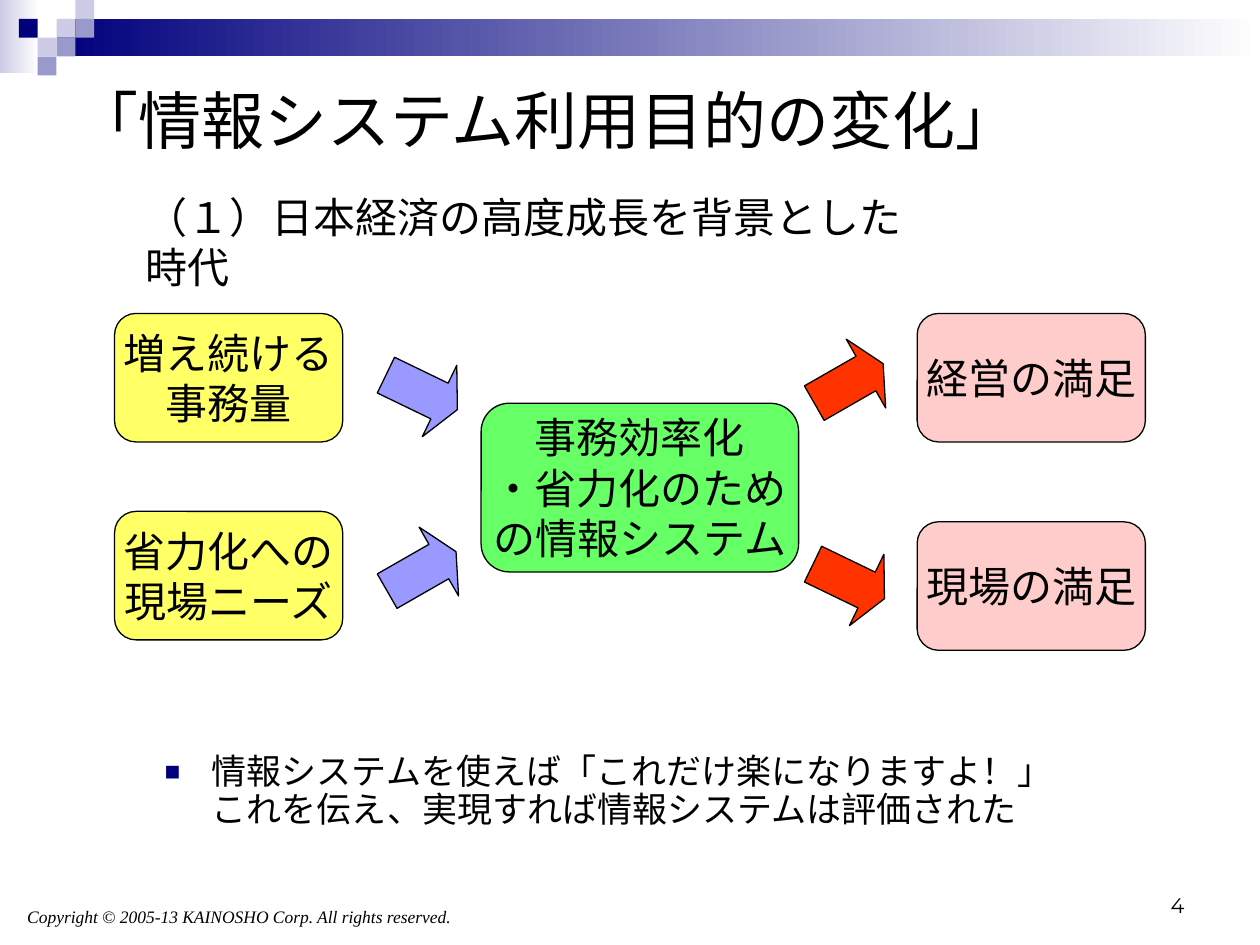
from dataclasses import dataclass

from lxml import etree
from pptx import Presentation
from pptx.dml.color import RGBColor
from pptx.enum import shapes, text
from pptx.oxml import ns
from pptx.util import Cm, Pt

BLACK = "000000"
NAVY = "00007D"
PALE = "CCCCE6"
LILAC = "9999CC"
PIXEL = 0.38
ARROW_SIZE = 1.6
INDENT = 0.95
SHAPE = shapes.MSO_SHAPE
ANCHOR = text.MSO_ANCHOR
ALIGN = text.PP_ALIGN


@dataclass
class Area:
    left: float
    top: float
    width: float
    height: float

    def lengths(self) -> tuple:
        return Cm(self.left), Cm(self.top), Cm(self.width), Cm(self.height)


@dataclass
class Box:
    area: Area
    fill: str
    lines: list


@dataclass
class Arrow:
    left: float
    top: float
    rotation: float
    fill: str


@dataclass
class Pixel:
    column: int
    row: int
    fill: str


SMALL = (4.6, 2.59)
BOXES = [
    Box(Area(9.7, 8.13, 6.4, 3.4), "66FF66",
        ["事務効率化", "・省力化のため", "の情報システム"]),
    Box(Area(18.49, 6.32, *SMALL), "FFCCCC", ["経営の満足"]),
    Box(Area(18.49, 10.52, *SMALL), "FFCCCC", ["現場の満足"]),
    Box(Area(2.31, 6.32, *SMALL), "FFFF66", ["増え続ける", "事務量"]),
    Box(Area(2.31, 10.31, *SMALL), "FFFF66", ["省力化への", "現場ニーズ"]),
]
DOWN, UP = 25.8, 330.2
ARROWS = [
    Arrow(7.7, 7.11, DOWN, "9999FF"),
    Arrow(7.7, 10.72, UP, "9999FF"),
    Arrow(16.31, 6.93, UP, "FF3300"),
    Arrow(16.31, 10.92, DOWN, "FF3300"),
]
PIXELS = [
    Pixel(3, 1, PALE), Pixel(4, 0, PALE), Pixel(4, 1, LILAC),
    Pixel(2, 2, PALE), Pixel(1, 1, NAVY), Pixel(3, 2, LILAC),
    Pixel(2, 3, LILAC),
]


def color(value: str) -> RGBColor:
    return RGBColor.from_string(value)


def apply(target, values: dict) -> None:
    for name, value in values.items():
        setattr(target, name, value)


def write(shape, lines: list, size: float, frame_format: dict,
          font_format: dict = {}, alignment=ALIGN.LEFT) -> None:
    frame = shape.text_frame
    frame.text = "\n".join(lines)
    apply(frame, {"auto_size": text.MSO_AUTO_SIZE.NONE, **frame_format})
    for paragraph in frame.paragraphs:
        paragraph.alignment = alignment
        for run in paragraph.runs:
            apply(run.font, {"name": "Arial", "size": Pt(size), **font_format})
            run.font.color.rgb = color(BLACK)


def add_textbox(slide, area: Area, *content, **options):
    textbox = slide.shapes.add_textbox(*area.lengths())
    write(textbox, *content, **options)
    return textbox


def add_filled(slide, kind, area: Area, fill: str, outlined: bool = False):
    shape = slide.shapes.add_shape(kind, *area.lengths())
    shape.shadow.inherit = False
    shape.fill.solid()
    shape.fill.fore_color.rgb = color(fill)
    if outlined:
        shape.line.color.rgb = color(BLACK)
        shape.line.width = Pt(0.75)
    else:
        shape.line.fill.background()
    return shape


def add_fade(slide, area: Area, start: str, end: str) -> None:
    shape = add_filled(slide, SHAPE.RECTANGLE, area, start)
    shape.fill.gradient()
    shape.fill.gradient_angle = 0
    for stop, value in zip(shape.fill.gradient_stops, (start, end)):
        stop.color.rgb = color(value)


def add_box(slide, box: Box) -> None:
    shape = add_filled(slide, SHAPE.ROUNDED_RECTANGLE, box.area, box.fill, True)
    write(shape, box.lines, 24,
          {"word_wrap": False, "vertical_anchor": ANCHOR.MIDDLE},
          alignment=ALIGN.CENTER)


def add_arrow(slide, arrow: Arrow) -> None:
    area = Area(arrow.left, arrow.top, ARROW_SIZE, ARROW_SIZE)
    shape = add_filled(slide, SHAPE.RIGHT_ARROW, area, arrow.fill, True)
    shape.adjustments[1] = 0.25
    shape.rotation = arrow.rotation


def add_bullet(paragraph) -> None:
    properties = paragraph._p.get_or_add_pPr()
    properties.set("marL", str(Cm(INDENT)))
    properties.set("indent", str(-Cm(INDENT)))
    bullet_color = etree.SubElement(properties, ns.qn("a:buClr"))
    etree.SubElement(bullet_color, ns.qn("a:srgbClr"), val=NAVY)
    etree.SubElement(properties, ns.qn("a:buSzPct"), val="75000")
    etree.SubElement(properties, ns.qn("a:buFont"), typeface="Arial")
    etree.SubElement(properties, ns.qn("a:buChar"), char="■")
    paragraph.line_spacing = 0.9


def main() -> None:
    presentation = Presentation()
    presentation.slide_width = Cm(25.4)
    presentation.slide_height = Cm(19.05)
    slide = presentation.slides.add_slide(presentation.slide_layouts[5])

    add_fade(slide, Area(0, 0, 0.79, 1.47), PALE, "FFFFFF")
    add_fade(slide, Area(3 * PIXEL, PIXEL, 24.26, 2 * PIXEL), NAVY, "FFFFFF")
    for pixel in PIXELS:
        area = Area(pixel.column * PIXEL, pixel.row * PIXEL, PIXEL, PIXEL)
        add_filled(slide, SHAPE.RECTANGLE, area, pixel.fill)

    title = slide.shapes.title
    names = ("left", "top", "width", "height")
    apply(title, dict(zip(names, Area(1.27, 1.27, 22.86, 2.26).lengths())))
    write(title, ["「情報システム利用目的の変化」"], 36,
          {"word_wrap": True, "vertical_anchor": ANCHOR.MIDDLE})

    for box in BOXES:
        add_box(slide, box)
    for arrow in ARROWS:
        add_arrow(slide, arrow)

    wrapped = {"word_wrap": True}
    add_textbox(slide, Area(2.69, 3.73, 15.75, 1.27),
                ["（１）日本経済の高度成長を背景とした時代"], 24, wrapped)
    message = add_textbox(
        slide, Area(3.07, 15.09, 22.02, 2.03),
        ["情報システムを使えば「これだけ楽になりますよ！」\v"
         "これを伝え、実現すれば情報システムは評価された"], 20, wrapped)
    add_bullet(message.text_frame.paragraphs[0])

    add_textbox(slide, Area(0.3, 18.14, 10.01, 0.69),
                ["Copyright © 2005-13 KAINOSHO Corp. All rights reserved."], 10,
                {**wrapped, "vertical_anchor": ANCHOR.MIDDLE},
                {"name": "Times New Roman", "italic": True})
    add_textbox(slide, Area(18.21, 17.35, 5.92, 1.27), ["4"], 12,
                {**wrapped, "vertical_anchor": ANCHOR.BOTTOM},
                {"name": "Montserrat"}, alignment=ALIGN.RIGHT)

    presentation.save("out.pptx")


if __name__ == "__main__":
    main()
